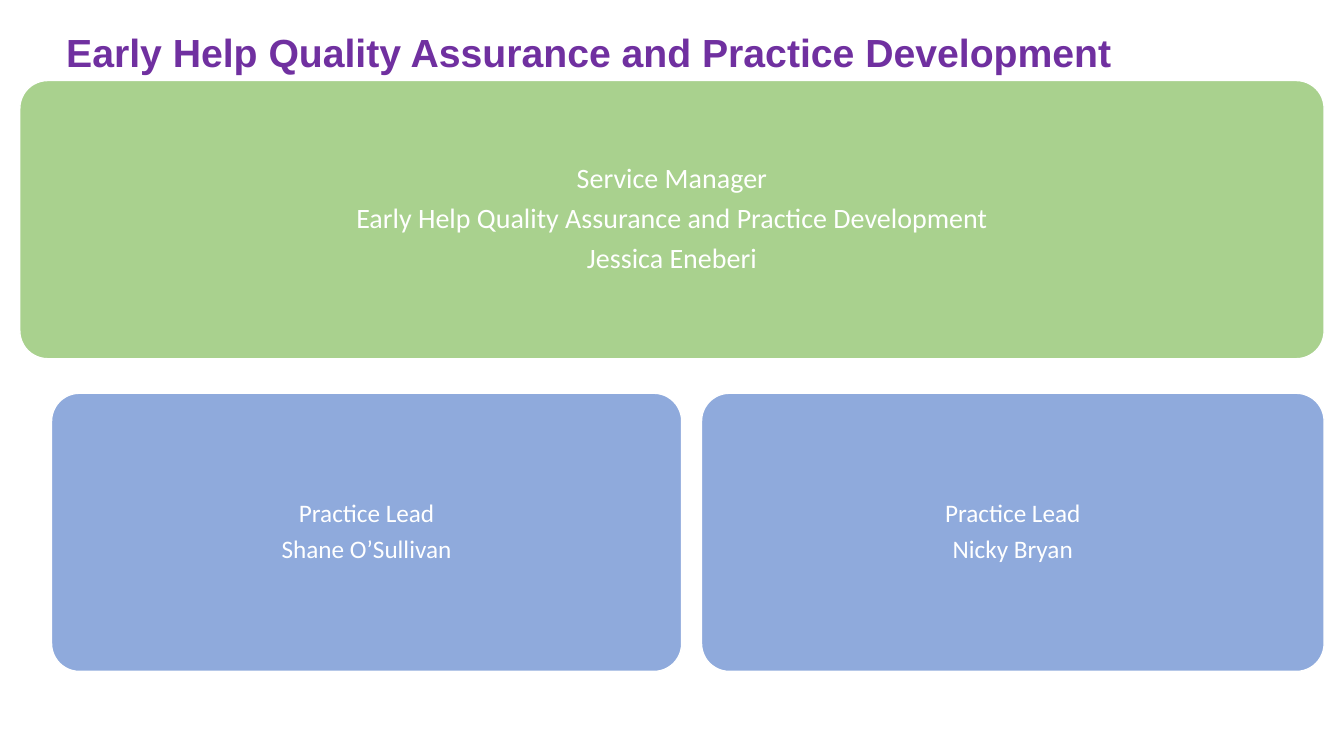
from pptx import Presentation
from pptx.dml.color import RGBColor
from pptx.enum.shapes import MSO_SHAPE
from pptx.enum.text import MSO_ANCHOR, PP_ALIGN
from pptx.util import Cm, Pt

GREEN, BLUE, PURPLE, WHITE = "A9D18E", "8FAADC", "7030A0", "FFFFFF"
RIGHT_EDGE = 33.37
CARD_HEIGHT = 7.01
CARD_INSET = 0.4
LEAD_LEFT, LEAD_TOP, LEAD_GAP = 1.3, 9.91, 0.5
LEADS = [("Shane O’Sullivan", 15.88), ("Nicky Bryan", 15.69)]


def color(hex_string):
    """Turn a hex string into a colour."""
    return RGBColor.from_string(hex_string)


def format_paragraph(paragraph, font_name, size, hex_color, bold=False):
    """Set the line spacing and the font of every run in a paragraph."""
    paragraph.line_spacing = 0.9
    for run in paragraph.runs:
        run.font.name = font_name
        run.font.size = Pt(size)
        run.font.bold = bold
        run.font.color.rgb = color(hex_color)


def add_title(slide, left, top, width, height, text):
    """Place the slide title, resting on the bottom of its box."""
    box = slide.shapes.add_textbox(Cm(left), Cm(top), Cm(width), Cm(height))
    text_frame = box.text_frame
    text_frame.word_wrap = True
    text_frame.vertical_anchor = MSO_ANCHOR.BOTTOM
    text_frame.text = text
    format_paragraph(text_frame.paragraphs[0], "Arial", 28, PURPLE, bold=True)


def add_card(slide, left, top, width, height, fill, size, lines):
    """Place a rounded card with centred lines of text."""
    shape = slide.shapes.add_shape(
        MSO_SHAPE.ROUNDED_RECTANGLE, Cm(left), Cm(top), Cm(width), Cm(height))
    shape.adjustments[0] = 0.1
    shape.shadow.inherit = False
    shape.fill.solid()
    shape.fill.fore_color.rgb = color(fill)
    shape.line.color.rgb = color(WHITE)
    shape.line.width = Pt(1)
    text_frame = shape.text_frame
    text_frame.word_wrap = True
    text_frame.vertical_anchor = MSO_ANCHOR.MIDDLE
    text_frame.margin_left = text_frame.margin_right = Cm(CARD_INSET)
    text_frame.margin_top = text_frame.margin_bottom = Cm(CARD_INSET)
    text_frame.text = "\n".join(lines)
    for paragraph in text_frame.paragraphs:
        paragraph.alignment = PP_ALIGN.CENTER
        paragraph.space_after = Pt(size * 0.35)
        format_paragraph(paragraph, "Calibri", size, WHITE)


def add_leads(slide, left, top, height):
    """Place the practice lead cards in a row."""
    for name, width in LEADS:
        add_card(slide, left, top, width, height, BLUE, 18, ["Practice Lead", name])
        left += width + LEAD_GAP


def main():
    """Build the team structure slide and save it."""
    presentation = Presentation()
    presentation.slide_width, presentation.slide_height = Cm(33.87), Cm(19.05)
    slide = presentation.slides.add_slide(presentation.slide_layouts[6])
    team = "Early Help Quality Assurance and Practice Development"
    manager_left = 0.5
    add_card(slide, manager_left, 2.03, RIGHT_EDGE - manager_left, CARD_HEIGHT,
             GREEN, 20, ["Service Manager", team, "Jessica Eneberi"])
    add_leads(slide, LEAD_LEFT, LEAD_TOP, CARD_HEIGHT)
    add_title(slide, 1.42, 0.51, 29.21, 1.52, team)
    presentation.save("out.pptx")


if __name__ == "__main__":
    main()
